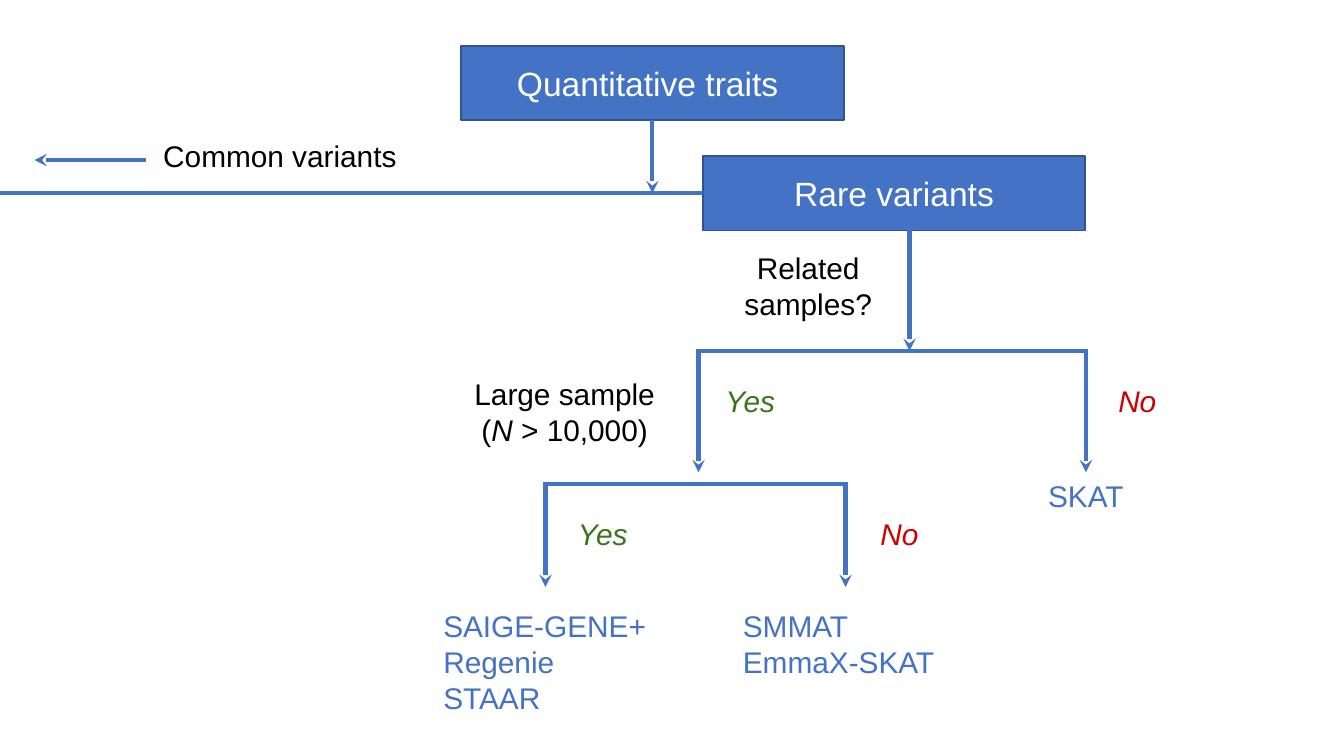
from lxml import etree
from pptx import Presentation
from pptx.dml.color import RGBColor
from pptx.enum.shapes import MSO_CONNECTOR, MSO_SHAPE
from pptx.enum.text import MSO_ANCHOR, PP_ALIGN
from pptx.oxml.ns import qn
from pptx.util import Pt

THEME = {
    "font": "Arial",
    "heading": 18, "body": 16,
    "line": 2.25, "border": 1,
    "blue": "4472C4", "navy": "31538F", "white": "FFFFFF",
    "black": "000000", "green": "38761D", "red": "CC0000",
}
TOP, BOTTOM, LEFT = 0, 2, 1  # connection sites
INSETS = (7, 3, 7, 3)
ANSWER_INSETS = (7.2,) * 4

# Filled boxes: text, left, top
BOX_SIZE = (205, 40)
BOXES = [
    ("Quantitative traits ", 247, 24.5),
    ("Rare variants", 376.5, 83.5),
]

# Questions and variant label: text (runs in italics as 1-tuples), left, top, width, height
LABELS = [
    (["Common variants"], 47.5, 68.5, 205, 30),
    (["Related samples?"], 371, 131, 124, 44),
    (["Large sample (", ("N",), " > 10,000)"], 242.5, 198.5, 120, 44),
]

# Recommended methods: names, left, top, width, height, alignment
METHODS = [
    (["SKAT"], 545.75, 253, 72, 25, PP_ALIGN.CENTER),
    (["SMMAT", "EmmaX-SKAT"], 391, 322.5, 124, 44, PP_ALIGN.LEFT),
    (["SAIGE-GENE+", "Regenie", "STAAR"], 230.5, 322.5, 124, 63, PP_ALIGN.LEFT),
]

# Answers: left edges of Yes and No, shared top
ANSWER_SIZE = (46, 34)
ANSWER_ROWS = [(381.5, 592, 198), (302.5, 464.5, 269)]

# Branches: left x, right x, bar y, left arrow end, right arrow end
SAMPLE_FORK = (374.25, 581.75, 188, (374.25, 253), ("SKAT", TOP))
SIZE_FORK = (292.25, 453, 259.5, (292.25, 314.5), (453, 314.5))

# Other lines: start, end, arrowhead; an end is a point or (shape text, site)
LINES = [
    ((-16, 103.5), ("Rare variants", LEFT), False),
    (("Quantitative traits ", BOTTOM), (349.5, 103.5), True),
    ((487.25, 111), (487.25, 188), True),
    ((78, 85.75), (18.5, 85.75), True),
]


def color(name):
    return RGBColor.from_string(THEME[name])


def fill_text(shape, paragraphs, size, ink, align, anchor=MSO_ANCHOR.TOP,
              insets=INSETS, italic=False):
    """Write paragraphs, each a list of runs; a 1-tuple run is italic."""
    frame = shape.text_frame
    frame.word_wrap = True
    frame.vertical_anchor = anchor
    (frame.margin_left, frame.margin_top,
     frame.margin_right, frame.margin_bottom) = map(Pt, insets)
    for number, runs in enumerate(paragraphs):
        paragraph = frame.add_paragraph() if number else frame.paragraphs[0]
        paragraph.alignment = align
        font = paragraph.font
        font.name, font.size = THEME["font"], Pt(THEME[size])
        font.color.rgb = color(ink)
        font.italic = italic
        for words in runs:
            run = paragraph.add_run()
            if isinstance(words, tuple):
                run.text, run.font.italic = words[0], True
            else:
                run.text = words


def add_line(slide, nodes, start, end, arrow):
    def point(place):
        return (0, 0) if place[0] in nodes else place

    line = slide.shapes.add_connector(
        MSO_CONNECTOR.STRAIGHT, *map(Pt, point(start) + point(end)))
    if start[0] in nodes:
        line.begin_connect(nodes[start[0]], start[1])
    if end[0] in nodes:
        line.end_connect(nodes[end[0]], end[1])
    line.line.color.rgb = color("blue")
    line.line.width = Pt(THEME["line"])
    if arrow:
        etree.SubElement(line.line._get_or_add_ln(), qn("a:tailEnd"), type="stealth")
    etree.SubElement(line._element.spPr, qn("a:effectLst"))


def add_fork(slide, nodes, left, right, y, left_end, right_end):
    overhang = THEME["line"] / 2  # closes the corners
    add_line(slide, nodes, (left - overhang, y), (right + overhang, y), False)
    add_line(slide, nodes, (left, y), left_end, True)
    add_line(slide, nodes, (right, y), right_end, True)


def main():
    deck = Presentation()
    deck.slide_width, deck.slide_height = Pt(720), Pt(405)
    slide = deck.slides.add_slide(deck.slide_layouts[6])
    shapes = slide.shapes
    nodes = {}

    for heading, left, top in BOXES:
        box = shapes.add_shape(MSO_SHAPE.RECTANGLE, *map(Pt, (left, top, *BOX_SIZE)))
        box.shadow.inherit = False
        box.fill.solid()
        box.fill.fore_color.rgb = color("blue")
        box.line.color.rgb = color("navy")
        box.line.width = Pt(THEME["border"])
        fill_text(box, [[heading]], "heading", "white", PP_ALIGN.CENTER, MSO_ANCHOR.MIDDLE)
        nodes[heading] = box

    for runs, *place in LABELS:
        label = shapes.add_textbox(*map(Pt, place))
        fill_text(label, [runs], "body", "black", PP_ALIGN.CENTER, MSO_ANCHOR.MIDDLE)

    for names, *place, align in METHODS:
        methods = shapes.add_textbox(*map(Pt, place))
        fill_text(methods, [[name] for name in names], "body", "blue", align)
        nodes[names[0]] = methods

    for yes_left, no_left, top in ANSWER_ROWS:
        for word, left, ink in (("Yes", yes_left, "green"), ("No", no_left, "red")):
            answer = shapes.add_textbox(*map(Pt, (left, top, *ANSWER_SIZE)))
            fill_text(answer, [[word]], "body", ink, PP_ALIGN.LEFT,
                      insets=ANSWER_INSETS, italic=True)

    for start, end, arrow in LINES:
        add_line(slide, nodes, start, end, arrow)
    for fork in (SAMPLE_FORK, SIZE_FORK):
        add_fork(slide, nodes, *fork)

    deck.save("out.pptx")


if __name__ == "__main__":
    main()
